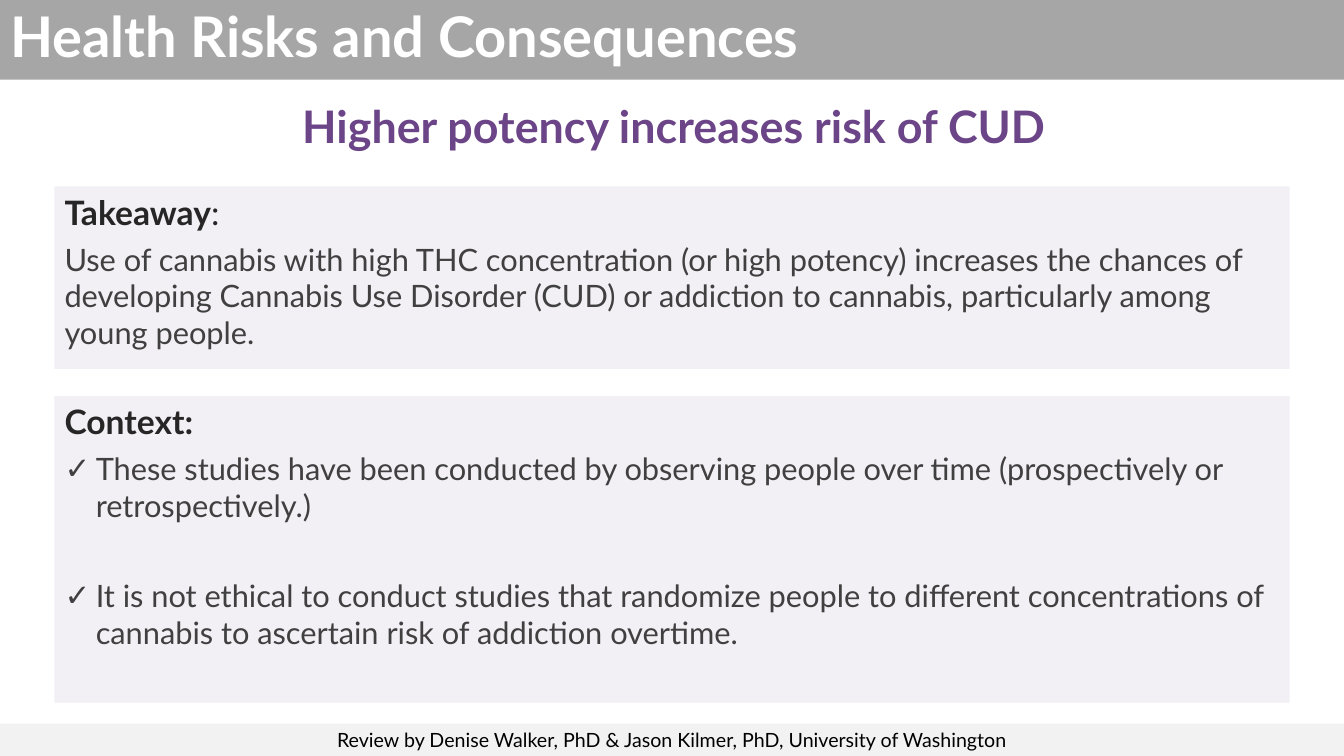
from lxml import etree
from pptx import Presentation
from pptx import util as u
from pptx.dml.color import RGBColor
from pptx.enum import text
from pptx.oxml import ns

COLORS = {
    "banner": "A6A6A6", "panel": "F2EFF5", "footer": "F2F2F2",
    "white": "FFFFFF", "purple": "6B4587", "heading": "262626",
    "body": "404040", "black": "000000",
}
FONT = "Lato"
PANEL_LEFT, PANEL_WIDTH = 0.54, 12.25
HEADING = {"size": 24, "color": "heading", "bold": True}
BODY = {"size": 22, "color": "body", "bold": False}


def rgb(name):
    return RGBColor.from_string(COLORS[name])


def place(region, box, fill=None, anchor=text.MSO_ANCHOR.TOP):
    """Move a placeholder to box (left, top, width, height) and clear its text."""
    for side, length in zip(("left", "top", "width", "height"), box):
        setattr(region, side, u.Inches(length))
    if fill:
        region.fill.solid()
        region.fill.fore_color.rgb = rgb(fill)
    frame = region.text_frame
    settings = {"word_wrap": True, "auto_size": text.MSO_AUTO_SIZE.NONE,
                "vertical_anchor": anchor}
    for name, value in settings.items():
        setattr(frame, name, value)
    return frame


def set_bullet(paragraph, mark):
    props = paragraph._p.get_or_add_pPr()
    indent = u.Inches(0.31) if mark else 0
    props.set("marL", str(indent))
    props.set("indent", str(-indent))
    if mark:
        etree.SubElement(props, ns.qn("a:buFont")).set("typeface", "Arial")
        etree.SubElement(props, ns.qn("a:buChar")).set("char", mark)
    else:
        etree.SubElement(props, ns.qn("a:buNone"))


def write(paragraph, runs, mark=None, align=text.PP_ALIGN.LEFT, spacing=1.0, after=0):
    """Fill a paragraph with (wording, style) runs."""
    set_bullet(paragraph, mark)
    layout = {"alignment": align, "line_spacing": spacing,
              "space_before": u.Pt(0), "space_after": u.Pt(after)}
    for name, value in layout.items():
        setattr(paragraph, name, value)
    for wording, style in runs:
        run = paragraph.add_run()
        run.text = wording
        font = {"name": FONT, "size": u.Pt(style["size"]), "bold": style["bold"]}
        for name, value in font.items():
            setattr(run.font, name, value)
        run.font.color.rgb = rgb(style["color"])


def banner(region, box, wording):
    frame = place(region, box, "banner", text.MSO_ANCHOR.MIDDLE)
    style = {"size": 40, "color": "white", "bold": True}
    write(frame.paragraphs[0], [(wording, style)], spacing=0.9)


def subtitle(region, box, wording):
    frame = place(region, box)
    style = {"size": 32, "color": "purple", "bold": True}
    write(frame.paragraphs[0], [(wording, style)],
          align=text.PP_ALIGN.CENTER, spacing=0.8)


def panel(region, box, heading, points, mark=None):
    """Tinted panel with a heading over one or more points."""
    frame = place(region, box, "panel")
    write(frame.paragraphs[0], heading, after=6)
    for point in points:
        write(frame.add_paragraph(), [(point, BODY)], mark, after=38)


def footer(region, box, wording):
    frame = place(region, box, "footer", text.MSO_ANCHOR.MIDDLE)
    style = {"size": 14, "color": "black", "bold": False}
    write(frame.paragraphs[0], [(wording, style)], align=text.PP_ALIGN.CENTER)


def main():
    deck = Presentation()
    deck.slide_width, deck.slide_height = u.Inches(13.33), u.Inches(7.5)
    slide = deck.slides.add_slide(deck.slide_layouts.get_by_name("Comparison"))
    title, potency, takeaway, credit, context = slide.placeholders

    banner(title, (0, 0, 13.33, 0.79), "Health Risks and Consequences")
    subtitle(potency, (PANEL_LEFT, 1.03, 12.29, 0.57),
             "Higher potency increases risk of CUD")
    panel(takeaway, (PANEL_LEFT, 1.85, PANEL_WIDTH, 1.81),
          [("Takeaway", HEADING), (":", {**HEADING, "bold": False})],
          ["Use of cannabis with high THC concentration (or high potency) increases "
           "the chances of developing Cannabis Use Disorder (CUD) or addiction to "
           "cannabis, particularly among young people."])
    panel(context, (PANEL_LEFT, 3.93, PANEL_WIDTH, 3.04),
          [("Context:", HEADING)],
          ["These studies have been conducted by observing people over time "
           "(prospectively or retrospectively.)",
           "It is not ethical to conduct studies that randomize people to different "
           "concentrations of cannabis to ascertain risk of addiction overtime."],
          mark="✓")
    footer(credit, (0, 7.18, 13.33, 0.32),
           "Review by Denise Walker, PhD & Jason Kilmer, PhD, University of Washington")
    deck.save("out.pptx")


if __name__ == "__main__":
    main()
